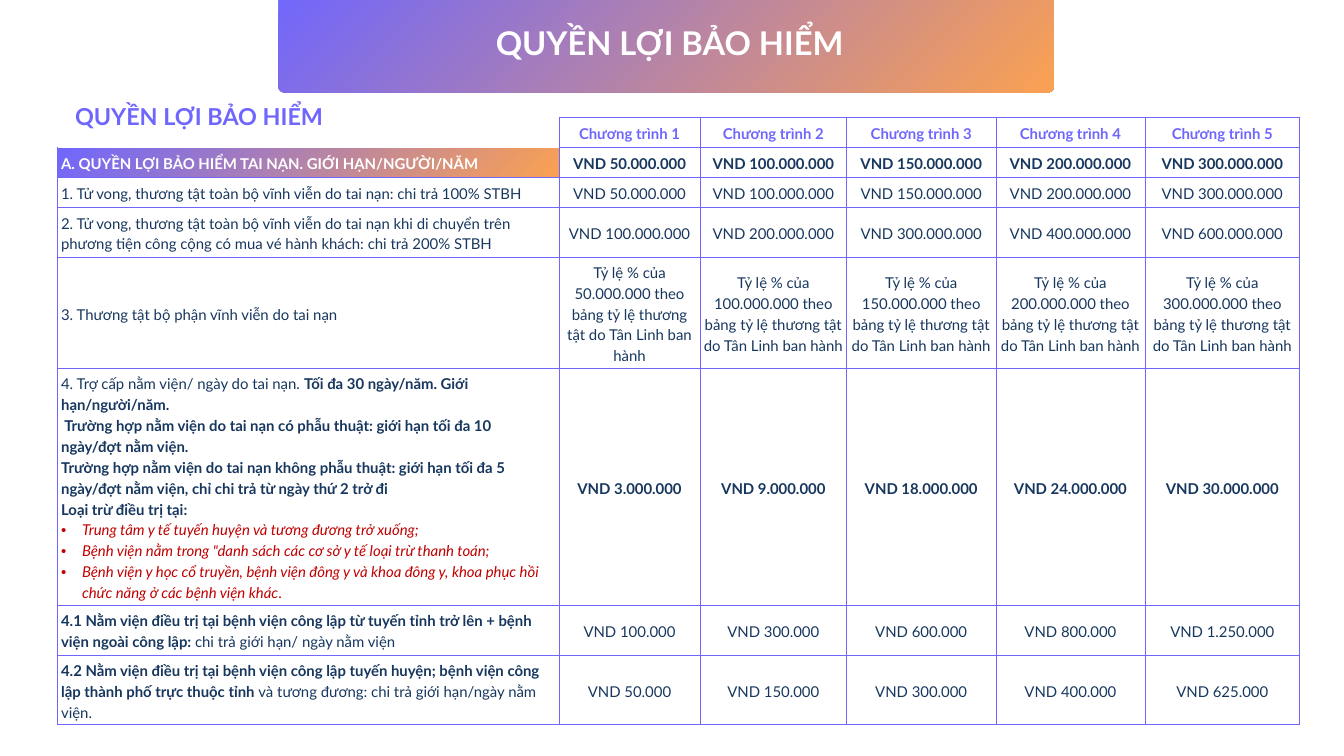
from lxml.etree import SubElement
from pptx import Presentation
from pptx.dml.color import RGBColor
from pptx.enum.shapes import MSO_SHAPE as Shape
from pptx.enum.text import MSO_ANCHOR as Anchor, MSO_AUTO_SIZE as AutoSize, PP_ALIGN as Align
from pptx.oxml import parse_xml
from pptx.oxml.ns import nsdecls, qn
from pptx.util import Cm, Pt

VIOLET, ORANGE, NAVY, RED, WHITE = "6F66FD", "FBA152", "17375E", "C00000", "FFFFFF"


def color(hex_value):
    return RGBColor.from_string(hex_value)


class BenefitSlide:
    """Holds the style and the current slide."""
    font = "Lato"
    leading = 1.4
    cell_size = 16
    border_width = Pt(0.75)
    cell_margin = Cm(0.13)

    def __init__(self, deck):
        self.slide = deck.slides.add_slide(deck.slide_layouts[5])

    def paragraph(self, paragraph, runs, size, hex_value, align=Align.LEFT):
        """Each run is (text, marks), where marks may hold b for bold and i for italic."""
        paragraph.alignment = align
        paragraph.line_spacing = Pt(round(size * self.leading, 1))
        for text, marks in runs:
            run = paragraph.add_run()
            run.text = text
            run.font.name = self.font
            run.font.size = Pt(size)
            run.font.bold = "b" in marks
            run.font.italic = "i" in marks
            run.font.color.rgb = color(hex_value)

    def bullet(self, paragraph):
        properties = paragraph._p.get_or_add_pPr()
        properties.set("marL", str(Cm(0.79)))
        properties.set("indent", str(-Cm(0.79)))
        SubElement(properties, qn("a:buFont"), typeface="Arial")
        SubElement(properties, qn("a:buChar"), char="•")

    def gradient(self, fill):
        fill.gradient()
        fill.gradient_angle = 315
        for stop, hex_value in zip(fill.gradient_stops, (VIOLET, ORANGE)):
            stop.color.rgb = color(hex_value)

    def banner(self, left, top, width, height):
        banner = self.slide.shapes.add_shape(
            Shape.ROUNDED_RECTANGLE, Cm(left), Cm(top), Cm(width), Cm(height))
        banner.adjustments[0] = 0.06
        banner.shadow.inherit = False
        banner.line.fill.background()
        self.gradient(banner.fill)

    def place_text(self, box, text, size, hex_value, align):
        frame = box.text_frame
        frame.word_wrap = True
        frame.auto_size = AutoSize.SHAPE_TO_FIT_TEXT
        frame.vertical_anchor = Anchor.TOP
        frame.margin_left = frame.margin_right = frame.margin_top = frame.margin_bottom = 0
        self.paragraph(frame.paragraphs[0], [(text, "b")], size, hex_value, align)

    def title(self, text, left, top, width, height):
        title = self.slide.shapes.title
        title.left, title.top, title.width, title.height = Cm(left), Cm(top), Cm(width), Cm(height)
        self.place_text(title, text, 35, WHITE, Align.CENTER)
        self.slide.shapes._spTree.append(title._element)  # in front of the banner

    def heading(self, text, left, top, width, height):
        heading = self.slide.shapes.add_textbox(Cm(left), Cm(top), Cm(width), Cm(height))
        self.place_text(heading, text, 25, VIOLET, Align.LEFT)

    def table(self, left, top, widths, heights):
        table = self.slide.shapes.add_table(
            len(heights), len(widths), Cm(left), Cm(top),
            Cm(sum(widths)), Cm(sum(heights))).table
        table.first_row = table.horz_banding = False
        for column, width in zip(table.columns, widths):
            column.width = Cm(width)
        for row, height in zip(table.rows, heights):
            row.height = Cm(height)
        return table

    def borders(self, cell, white_sides=""):
        properties = cell._tc.get_or_add_tcPr()
        for position, side in enumerate("LRTB"):
            hex_value = WHITE if side in white_sides else VIOLET
            properties.insert(position, parse_xml(
                f'<a:ln{side} {nsdecls("a")} w="{self.border_width}"><a:solidFill>'
                f'<a:srgbClr val="{hex_value}"/></a:solidFill></a:ln{side}>'))

    def cell(self, cell, paragraphs, hex_value=NAVY, align=Align.LEFT, white_sides=""):
        cell.vertical_anchor = Anchor.MIDDLE
        cell.margin_left = cell.margin_right = self.cell_margin
        cell.margin_top = cell.margin_bottom = self.cell_margin
        cell.fill.solid()
        cell.fill.fore_color.rgb = color(WHITE)
        self.borders(cell, white_sides)
        frame = cell.text_frame
        for index, runs in enumerate(paragraphs):
            paragraph = frame.add_paragraph() if index else frame.paragraphs[0]
            is_exclusion = "i" in runs[0][1]
            self.paragraph(paragraph, runs, self.cell_size,
                           RED if is_exclusion else hex_value, align)
            if is_exclusion:
                self.bullet(paragraph)


# Benefit descriptions, as paragraphs of runs
ACCIDENT = [[("A. QUYỀN LỢI BẢO HIỂM TAI NẠN. GIỚI HẠN/NGƯỜI/NĂM", "b")]]
DEATH = [[("1. Tử vong, thương tật toàn bộ vĩnh viễn do tai nạn: chi trả 100% STBH", "")]]
TRANSPORT = [[("2. Tử vong, thương tật toàn bộ vĩnh viễn do tai nạn khi di chuyển trên phương tiện "
               "công cộng có mua vé hành khách: chi trả 200% STBH", "")]]
DISABILITY = [[("3. Thương tật bộ phận vĩnh viễn do tai nạn", "")]]
HOSPITAL = [
    [("4. Trợ cấp nằm viện/ ngày do tai nạn. ", ""),
     ("Tối đa 30 ngày/năm. Giới hạn/người/năm.", "b")],
    [(" Trường hợp nằm viện do tai nạn có phẫu thuật: giới hạn tối đa 10 ngày/đợt nằm viện.", "b")],
    [("Trường hợp nằm viện do tai nạn không phẫu thuật: giới hạn tối đa 5 ngày/đợt nằm viện, "
      "chỉ chi trả từ ngày thứ 2 trở đi", "b")],
    [("Loại trừ điều trị tại:", "b")],
    [("Trung tâm y tế tuyến huyện và tương đương trở xuống;", "i")],
    [('Bệnh viện nằm trong "danh sách các cơ sở y tế loại trừ thanh toán;', "i")],
    [("Bệnh viện y học cổ truyền, bệnh viện đông y và khoa đông y, khoa phục hồi chức năng "
      "ở các bệnh viện khác", "i"), (".", "")],
]
PROVINCE = [[("4.1 Nằm viện điều trị tại bệnh viện công lập từ tuyến tỉnh trở lên + bệnh viện "
              "ngoài công lập: ", "b"), ("chi trả giới hạn/ ngày nằm viện", "")]]
DISTRICT = [[("4.2 Nằm viện điều trị tại bệnh viện công lập tuyến huyện; bệnh viện công lập "
              "thành phố trực thuộc tỉnh ", "b"),
             ("và tương đương: chi trả giới hạn/ngày nằm viện.", "")]]


def vnd(*amounts):
    return [f"VND {amount}" for amount in amounts]


# Values of the five programmes
LIMITS = ["50.000.000", "100.000.000", "150.000.000", "200.000.000", "300.000.000"]
PROGRAMMES = [f"Chương trình {number}" for number in range(1, 6)]
RATES = [f"Tỷ lệ % của {limit} theo bảng tỷ lệ thương tật do Tân Linh ban hành"
         for limit in LIMITS]

# Row height, description, values, marks of the values
ROWS = [
    (1.14, [], PROGRAMMES, "b"),
    (1.14, ACCIDENT, vnd(*LIMITS), "b"),
    (1.14, DEATH, vnd(*LIMITS), ""),
    (1.88, TRANSPORT, vnd("100.000.000", "200.000.000", "300.000.000",
                          "400.000.000", "600.000.000"), ""),
    (4.14, DISABILITY, RATES, ""),
    (8.64, HOSPITAL, vnd("3.000.000", "9.000.000", "18.000.000",
                         "24.000.000", "30.000.000"), "b"),
    (1.88, PROVINCE, vnd("100.000", "300.000", "600.000", "800.000", "1.250.000"), ""),
    (2.64, DISTRICT, vnd("50.000", "150.000", "300.000", "400.000", "625.000"), ""),
]


def main():
    deck = Presentation()
    deck.slide_width, deck.slide_height = Cm(50.8), Cm(28.58)
    page = BenefitSlide(deck)

    # Benefit table
    benefits = page.table(2.18, 4.42, [18.95, 5.33, 5.54, 5.64, 5.64, 5.84],
                          [height for height, *_ in ROWS])
    white_sides = {0: "LTB", 1: "T"}
    for row, (_, description, values, marks) in enumerate(ROWS):
        page.cell(benefits.cell(row, 0), description, WHITE if row == 1 else NAVY,
                  white_sides=white_sides.get(row, ""))
        for column, value in enumerate(values, start=1):
            page.cell(benefits.cell(row, column), [[(value, marks)]],
                      NAVY if row else VIOLET, Align.CENTER)
    benefits.cell(0, 0).fill.background()
    page.gradient(benefits.cell(1, 0).fill)

    # Banner with the title, and the heading beside the table's first row
    page.banner(10.52, -0.36, 29.31, 3.86)
    page.title("QUYỀN LỢI BẢO HIỂM", 10.8, 0.61, 29.03, 1.63)
    page.heading("QUYỀN LỢI BẢO HIỂM", 2.84, 3.68, 11.35, 1.14)

    deck.save("out.pptx")


if __name__ == "__main__":
    main()
